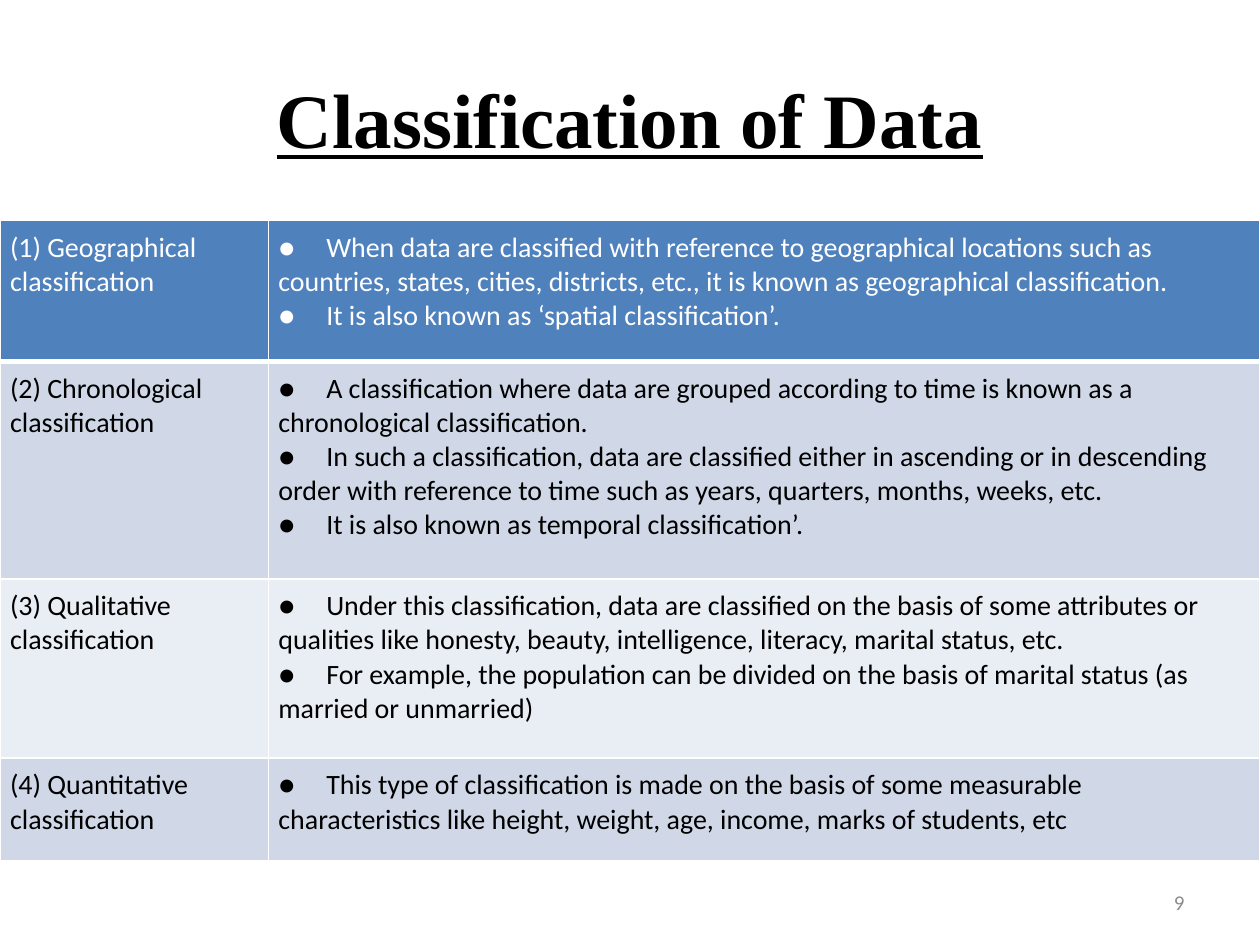
from dataclasses import dataclass

from lxml.etree import SubElement
from pptx import Presentation
from pptx.dml.color import RGBColor as Color
from pptx.enum.text import MSO_ANCHOR as Anchor, PP_ALIGN as Align
from pptx.oxml.ns import qn
from pptx.util import Emu, Inches, Pt


@dataclass(frozen=True)
class Theme:
    title_font: str = "Times New Roman"
    body_font: str = "Calibri"
    title_size: int = 44
    body_size: int = 16
    number_size: int = 12
    ink: str = "000000"
    paper: str = "FFFFFF"
    header: str = "4F81BD"
    bands: tuple = ("E9EDF4", "D0D8E8")
    muted: str = "8C8C8C"
    thin: int = 1
    thick: int = 3


THEME = Theme()
BULLET = "●\t"
BULLET_TAB = Inches(0.38)
CELL_MARGIN = Inches(0.08)
COLUMN_SHARES = (0.213, 0.787)
ROW_SHARES = (0.22, 0.34, 0.28, 0.16)

CLASSIFICATIONS = (
    ("(1) Geographical classification", (
        "When data are classified with reference to geographical locations such as "
        "countries, states, cities, districts, etc., it is known as geographical classification.",
        "It is also known as ‘spatial classification’.",
    )),
    ("(2) Chronological classification", (
        "A classification where data are grouped according to time is known as a "
        "chronological classification.",
        "In such a classification, data are classified either in ascending or in descending "
        "order with reference to time such as years, quarters, months, weeks, etc.",
        "It is also known as temporal classification’.",
    )),
    ("(3) Qualitative classification", (
        "Under this classification, data are classified on the basis of some attributes or "
        "qualities like honesty, beauty, intelligence, literacy, marital status, etc.",
        "For example, the population can be divided on the basis of marital status (as "
        "married or unmarried)",
    )),
    ("(4) Quantitative classification", (
        "This type of classification is made on the basis of some measurable "
        "characteristics like height, weight, age, income, marks of students, etc",
    )),
)


def share_box(presentation, left, top, width, height):
    across, down = presentation.slide_width, presentation.slide_height
    return (Emu(int(across * left)), Emu(int(down * top)),
            Emu(int(across * width)), Emu(int(down * height)))


def style_runs(text_frame, name, size, color, bold=False, underline=False):
    for paragraph in text_frame.paragraphs:
        for run in paragraph.runs:
            font = run.font
            font.name, font.size = name, Pt(size)
            font.bold, font.underline = bold, underline
            font.color.rgb = Color.from_string(color)


def add_line_of_text(slide, box, text, align, **style):
    text_frame = slide.shapes.add_textbox(*box).text_frame
    text_frame.word_wrap = True
    text_frame.vertical_anchor = Anchor.MIDDLE
    text_frame.text = text
    text_frame.paragraphs[0].alignment = align
    style_runs(text_frame, **style)


def set_borders(cell, bottom):
    properties = cell._tc.get_or_add_tcPr()
    widths = {"a:lnL": THEME.thin, "a:lnR": THEME.thin, "a:lnT": THEME.thin, "a:lnB": bottom}
    for tag, width in widths.items():
        line = SubElement(properties, qn(tag), w=str(Pt(width)))
        fill = SubElement(line, qn("a:solidFill"))
        SubElement(fill, qn("a:srgbClr"), val=THEME.paper)


def set_bullet_tab(paragraph):
    tabs = SubElement(paragraph._p.get_or_add_pPr(), qn("a:tabLst"))
    SubElement(tabs, qn("a:tab"), pos=str(BULLET_TAB), algn="l")


def fill_cell(cell, text, row):
    is_header = row == 0
    cell.margin_left = cell.margin_right = CELL_MARGIN
    cell.margin_top = cell.margin_bottom = CELL_MARGIN
    cell.vertical_anchor = Anchor.TOP
    set_borders(cell, THEME.thick if is_header else THEME.thin)
    cell.fill.solid()
    background = THEME.header if is_header else THEME.bands[row % 2]
    cell.fill.fore_color.rgb = Color.from_string(background)
    cell.text_frame.text = text
    style_runs(cell.text_frame, THEME.body_font, THEME.body_size,
               THEME.paper if is_header else THEME.ink)


def add_classification_table(slide, box):
    width, height = box[2:]
    table = slide.shapes.add_table(len(CLASSIFICATIONS), len(COLUMN_SHARES), *box).table
    for column, share in zip(table.columns, COLUMN_SHARES):
        column.width = Emu(int(width * share))
    for table_row, share in zip(table.rows, ROW_SHARES):
        table_row.height = Emu(int(height * share))
    for row, (name, points) in enumerate(CLASSIFICATIONS):
        fill_cell(table.cell(row, 0), name, row)
        details = table.cell(row, 1)
        fill_cell(details, "\n".join(BULLET + point for point in points), row)
        for paragraph in details.text_frame.paragraphs:
            set_bullet_tab(paragraph)


def main():
    presentation = Presentation()
    presentation.slide_width, presentation.slide_height = Inches(10), Inches(7.5)
    slide = presentation.slides.add_slide(presentation.slide_layouts[6])
    add_line_of_text(slide, share_box(presentation, 0.05, 0.04, 0.9, 0.17),
                     "Classification of Data", Align.CENTER, name=THEME.title_font,
                     size=THEME.title_size, color=THEME.ink, bold=True, underline=True)
    add_classification_table(slide, (0, Inches(1.75), presentation.slide_width, Inches(5.08)))
    add_line_of_text(slide, share_box(presentation, 0.72, 0.93, 0.23, 0.05),
                     "9", Align.RIGHT, name=THEME.body_font,
                     size=THEME.number_size, color=THEME.muted)
    presentation.save("out.pptx")


if __name__ == "__main__":
    main()
